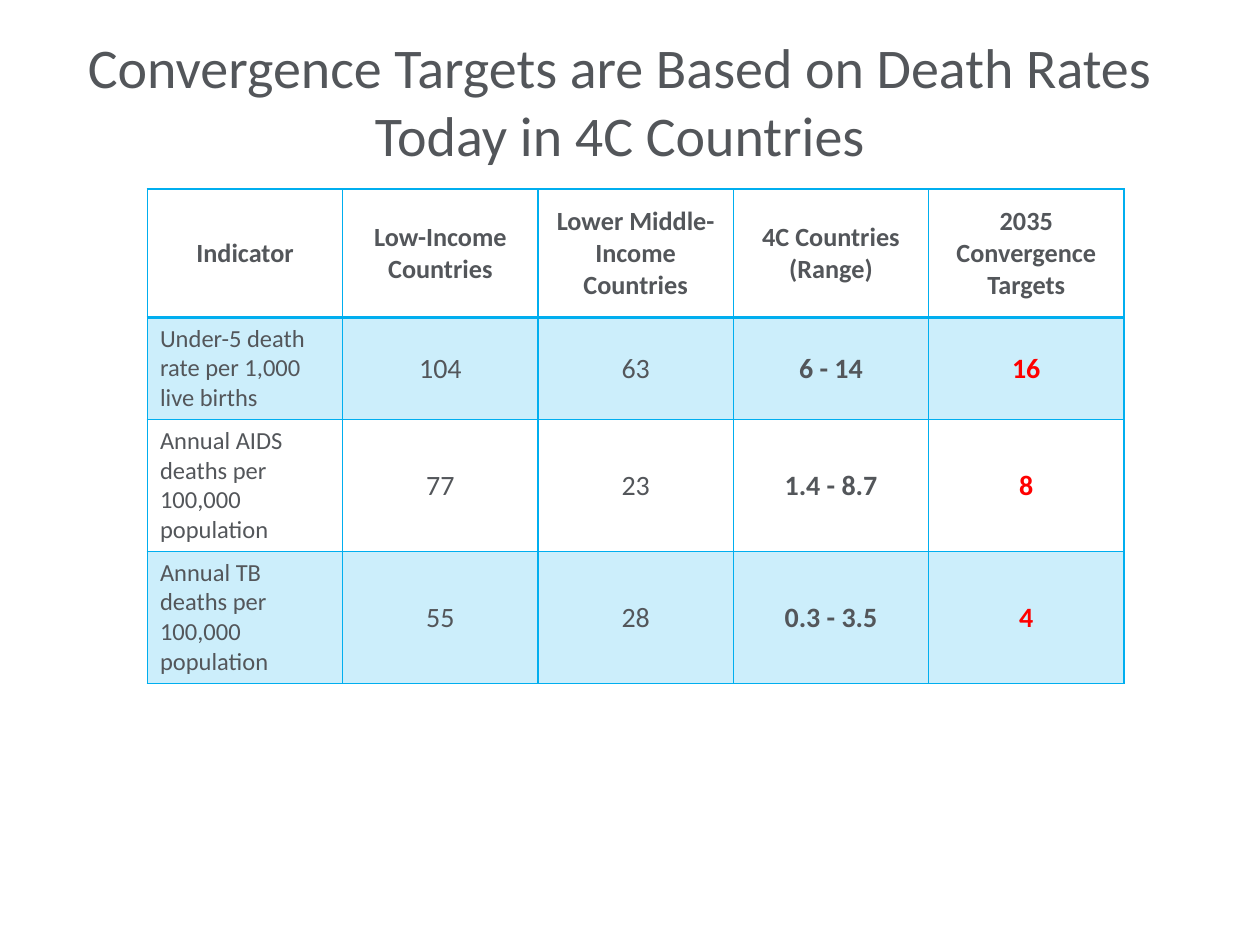
"""Build a slide with a table of death rates and 2035 convergence targets."""
from lxml.etree import SubElement
from pptx import Presentation
from pptx.dml.color import RGBColor
from pptx.enum.text import MSO_ANCHOR, PP_ALIGN
from pptx.oxml.ns import qn
from pptx.util import Inches, Pt

COLORS = {"text": "53565A", "accent": "00AEEF", "target": "FF0000"}
HEADINGS = [
    "Indicator",
    "Low-Income Countries",
    "Lower Middle-Income Countries",
    "4C Countries (Range)",
    "2035 Convergence\nTargets",
]
RATES = [
    ["Under-5 death rate per 1,000 live births", "104", "63", "6 - 14", "16"],
    ["Annual AIDS deaths per 100,000 population", "77", "23", "1.4 - 8.7", "8"],
    ["Annual TB deaths per 100,000 population", "55", "28", "0.3 - 3.5", "4"],
]
RANGE_COLUMN, TARGET_COLUMN = 3, 4


class SlideBuilder:
    def __init__(self, slide, font="Calibri"):
        self.slide = slide
        self.font = font

    def set_text(self, holder, text, size, color="text", bold=False, align=PP_ALIGN.CENTER):
        holder.text_frame.text = text
        for paragraph in holder.text_frame.paragraphs:
            paragraph.alignment = align
            for run in paragraph.runs:
                run.font.name = self.font
                run.font.size = Pt(size)
                run.font.bold = bold
                run.font.color.rgb = RGBColor.from_string(COLORS[color])

    def title(self, text, left, top, width, height):
        heading = self.slide.shapes.title
        heading.left, heading.top = Inches(left), Inches(top)
        heading.width, heading.height = Inches(width), Inches(height)
        self.set_text(heading, text, 32)
        heading.text_frame.word_wrap = True
        heading.text_frame.vertical_anchor = MSO_ANCHOR.MIDDLE

    def cell(self, cell, text, size, shaded=False, borders=None, **style):
        self.set_text(cell, text, size, **style)
        cell.vertical_anchor = MSO_ANCHOR.MIDDLE
        self.borders(cell, borders or {})
        self.shade(cell, shaded)

    def borders(self, cell, widths):
        properties = cell._tc.get_or_add_tcPr()
        for side in "LRTB":
            line = SubElement(properties, qn(f"a:ln{side}"), w=str(Pt(widths.get(side, 1))))
            fill = SubElement(line, qn("a:solidFill"))
            SubElement(fill, qn("a:srgbClr"), val=COLORS["accent"])

    def shade(self, cell, shaded):
        if not shaded:
            cell.fill.background()
            return
        cell.fill.solid()
        cell.fill.fore_color.rgb = RGBColor.from_string(COLORS["accent"])
        tint = cell._tc.tcPr.find(f"{qn('a:solidFill')}/{qn('a:srgbClr')}")
        SubElement(tint, qn("a:alpha"), val="20000")

    def table(self, headings, rates, left, top, width, height, header_height, row_height):
        frame = self.slide.shapes.add_table(
            len(rates) + 1, len(headings),
            Inches(left), Inches(top), Inches(width), Inches(height),
        )
        grid = frame.table
        grid.first_row = grid.horz_banding = False
        for index, row in enumerate(grid.rows):
            row.height = Inches(row_height if index else header_height)
        frame.height = Inches(height)

        for column, heading in enumerate(headings):
            self.cell(grid.cell(0, column), heading, 15, borders={"B": 2}, bold=True)

        for row, values in enumerate(rates, start=1):
            for column, value in enumerate(values):
                self.cell(
                    grid.cell(row, column), value,
                    size=16 if column else 14,
                    shaded=row % 2 == 1,
                    borders={"T": 2 if row == 1 else 1},
                    color="target" if column == TARGET_COLUMN else "text",
                    bold=column >= RANGE_COLUMN,
                    align=PP_ALIGN.CENTER if column else PP_ALIGN.LEFT,
                )


def main():
    presentation = Presentation()
    presentation.slide_width, presentation.slide_height = Inches(10), Inches(7.5)
    title_only = presentation.slide_layouts[5]
    builder = SlideBuilder(presentation.slides.add_slide(title_only))
    builder.title(
        "Convergence Targets are Based on Death Rates Today in 4C Countries",
        0.42, 0.17, 9, 1.25,
    )
    builder.table(HEADINGS, RATES, 1.17, 1.5, 7.75, 3.88, header_height=1.02, row_height=0.41)
    presentation.save("out.pptx")


if __name__ == "__main__":
    main()
